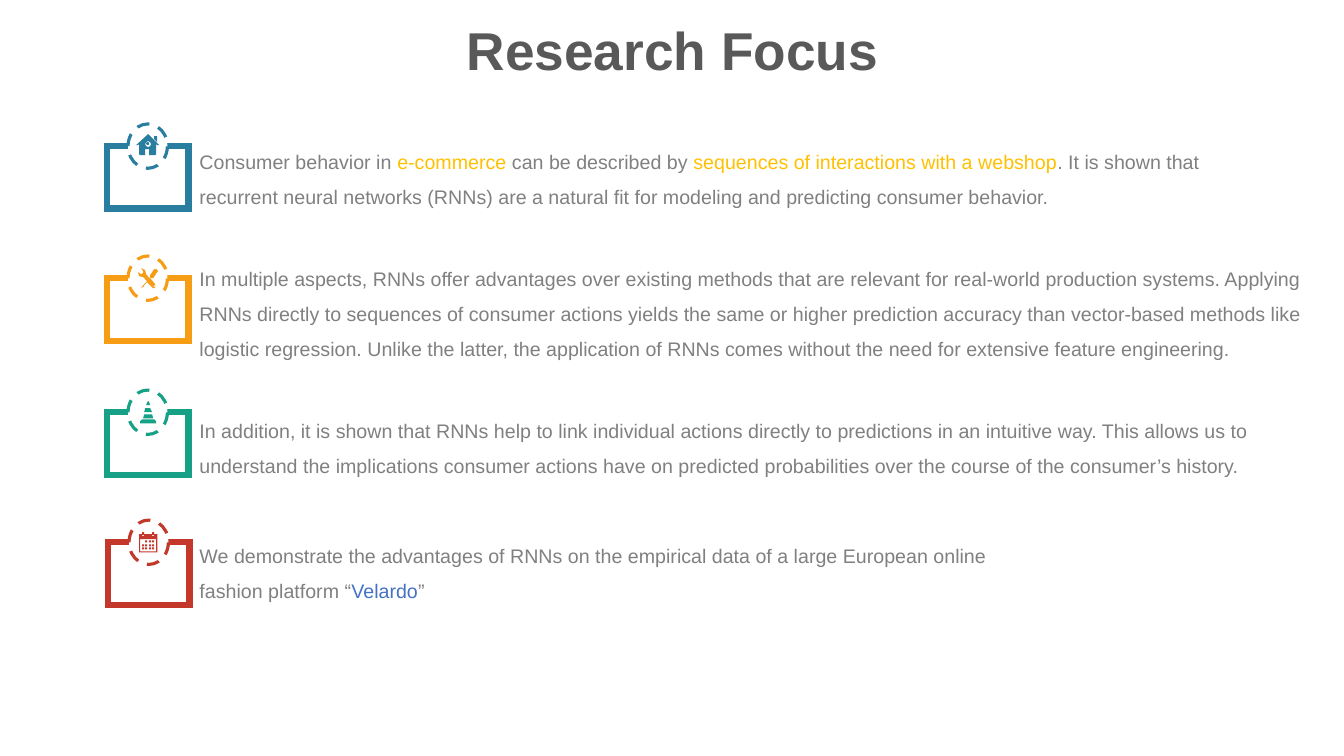
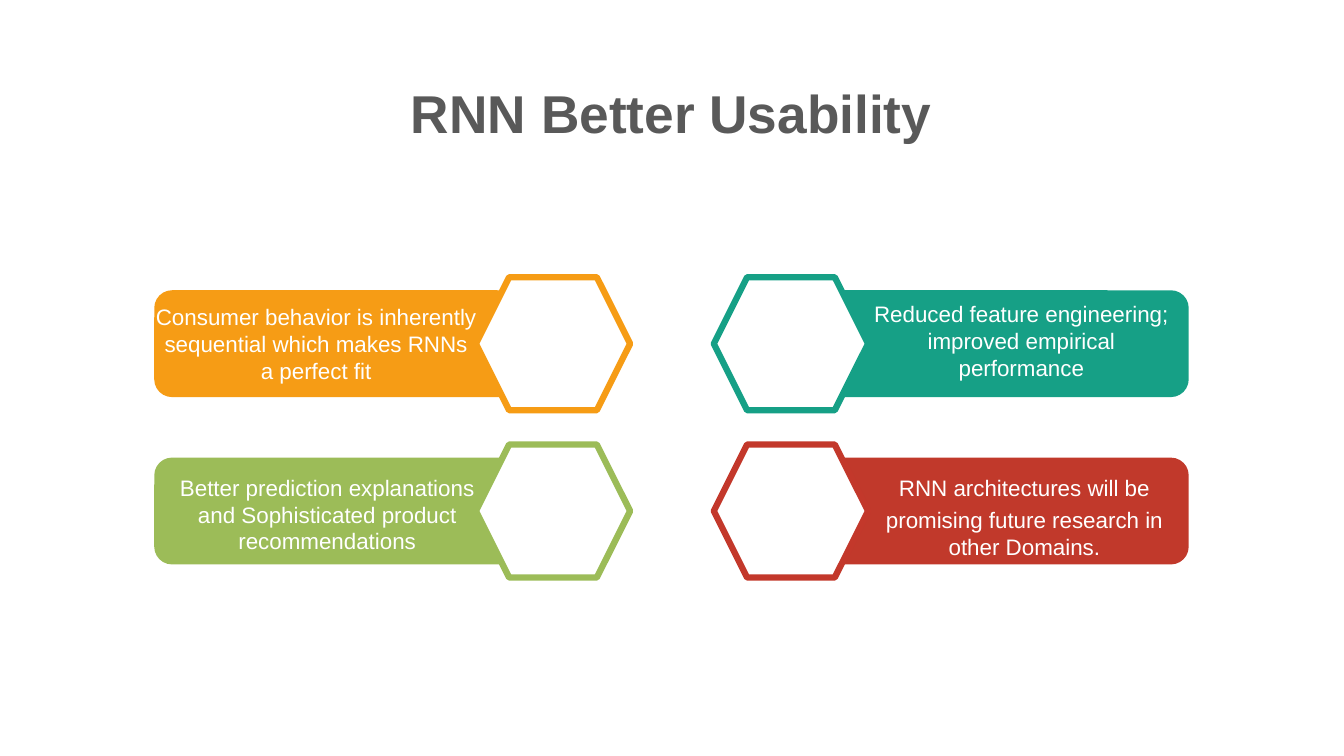
from dataclasses import dataclass

from lxml import etree
from pptx import Presentation
from pptx.dml.color import RGBColor as RGB
from pptx.enum.dml import MSO_LINE as Dash
from pptx.enum.shapes import MSO_SHAPE as Shape
from pptx.enum.text import MSO_ANCHOR as Anchor, PP_ALIGN as Align
from pptx.oxml.ns import qn
from pptx.util import Inches, Pt


@dataclass(frozen=True)
class Theme:
    font: str = "Arial"
    title: int = 38
    label: int = 16
    body: int = 14
    stroke: float = 4.5
    ring: float = 2.25
    dark: str = "595959"
    gray: str = "808080"
    white: str = "FFFFFF"
    gold: str = "FFC000"
    link: str = "4472C4"
    blue: str = "297E9F"
    orange: str = "F69C15"
    teal: str = "16A086"
    red: str = "C1392B"
    ruby: str = "C3382B"
    lime: str = "9CBC58"


THEME = Theme()

# Icon outlines in hundredths of an inch from the badge frame's corner;
# each outline is a list of contours, where an inner contour is a hole.
HOUSE = [
    [[(41, -12), (29, -1), (31, -1), (32, -2), (32, 8), (33, 9), (38, 9),
      (38, 3), (42, 3), (42, 9), (48, 9), (49, 8), (49, -2), (50, -1),
      (52, -1)],
     [(41, 1), (39, 0), (38, -2), (39, -4), (41, -5), (43, -4), (44, -2),
      (43, 0)]],
    [[(50, -4), (50, -10), (47, -10), (47, -7)]],
]
TOOLS = [
    [[(51, -7), (49, -9), (47, -9), (43, -3), (43, -1), (42, 0), (39, -4),
      (38, -8), (34, -10), (36, -7), (36, -5), (34, -4), (31, -6), (32, -2),
      (36, -1), (40, 3), (37, 6), (36, 7), (34, 10), (37, 8), (37, 7), (40, 4),
      (46, 10), (48, 10), (48, 6), (43, 0), (44, -1), (44, 0), (46, 0),
      (50, -6)],
     [(47, 7), (48, 8), (47, 9), (46, 8)]],
]
CONE = [
    [[(49, 11), (33, 11), (33, 9), (35, 7), (47, 7), (49, 9)],
     [(36, 6), (37, 2), (45, 2), (46, 6)],
     [(37, 0), (38, -4), (43, -4), (45, 0)],
     [(40, -10), (41, -11), (42, -10), (43, -7), (39, -7)]],
]
DATES = [
    [[(49, -8), (46, -8), (46, -6), (44, -6), (44, -8), (36, -8), (36, -6),
      (34, -6), (34, -8), (31, -8), (31, 10), (49, 10)],
     [(48, 9), (32, 9), (32, -3), (48, -3)]],
]

# Small preset parts of an icon: kind, left, top, width, height.
KNOB = [(Shape.OVAL, 39, -4, 3, 3)]
DAYS = [(Shape.RECTANGLE, x, y, 2, 2) for y in (-2, 2, 5)
        for x in (34, 37, 41, 44) if (x, y) != (34, -2)]
TABS = [(Shape.RECTANGLE, x, -10, 2, 3) for x in (34, 44)]


def write(frame, paras, size=THEME.body, color=THEME.gray, bold=False,
          align=Align.LEFT, lines=1.0, gap=0):
    """Fill a frame; a paragraph is a list of strings or (string, colour) pairs."""
    for i, runs in enumerate(paras):
        para = frame.paragraphs[0] if i == 0 else frame.add_paragraph()
        para.alignment = align
        para.line_spacing = lines
        if i:
            para.space_before = Pt(gap)
        for item in runs:
            text, tint = (item, color) if isinstance(item, str) else item
            run = para.add_run()
            run.text = text
            font = run.font
            font.name, font.size, font.bold = THEME.font, Pt(size), bold
            font.color.rgb = RGB.from_string(tint)


class Deck:
    def __init__(self):
        self.prs = Presentation()
        self.prs.slide_width = Inches(13.33)
        self.prs.slide_height = Inches(7.5)
        self.slide = None

    def page(self, title, x, y, h):
        self.slide = self.prs.slides.add_slide(self.prs.slide_layouts[6])
        self.text([[title]], x, y, 10, h, anchor=Anchor.MIDDLE,
                  size=THEME.title, color=THEME.dark, bold=True,
                  align=Align.CENTER, lines=0.9)

    def text(self, paras, x, y, w, h, anchor=Anchor.TOP, inset=True, **style):
        area = self.slide.shapes.add_textbox(*map(Inches, (x, y, w, h)))
        frame = area.text_frame
        frame.word_wrap = True
        frame.vertical_anchor = anchor
        if not inset:
            frame.margin_left = frame.margin_right = 0
            frame.margin_top = frame.margin_bottom = 0
        write(frame, paras, **style)

    def paint(self, shape, fill=None, line=None, width=THEME.stroke):
        shape.shadow.inherit = False
        if fill:
            shape.fill.solid()
            shape.fill.fore_color.rgb = RGB.from_string(fill)
        else:
            shape.fill.background()
        if line:
            shape.line.color.rgb = RGB.from_string(line)
            shape.line.width = Pt(width)
        else:
            shape.line.fill.background()
        return shape

    def shape(self, kind, x, y, w, h, **look):
        item = self.slide.shapes.add_shape(kind, *map(Inches, (x, y, w, h)))
        return self.paint(item, **look)

    def trace(self, parts, x, y, color):
        """Draw one outline made of several contours."""
        pen = self.slide.shapes.build_freeform(*parts[0][0], scale=Inches(0.01))
        for i, part in enumerate(parts):
            if i:
                pen.move_to(*part[0])
            pen.add_line_segments(part[1:], close=True)
        self.paint(pen.convert_to_shape(Inches(x), Inches(y)), fill=color)

    def badge(self, icon, bits, x, y, color, rim):
        frame = self.shape(Shape.RECTANGLE, x, y, 0.81, 0.62, line=color)
        miter = etree.SubElement(frame.line._get_or_add_ln(), qn("a:miter"))
        miter.set("lim", "800000")
        ring = self.shape(Shape.OVAL, x + 0.21, y - 0.22, 0.39, 0.44,
                          fill=THEME.white, line=rim, width=THEME.ring)
        ring.line.dash_style = Dash.DASH
        for parts in icon:
            self.trace(parts, x, y, color)
        for kind, left, top, w, h in bits:
            self.shape(kind, x + left / 100, y + top / 100, w / 100, h / 100,
                       fill=color)


def focus(deck):
    deck.page("Research Focus", 1.67, 0.03, 1)
    rows = [
        (HOUSE, KNOB, 1.06, 1.45, THEME.blue, THEME.blue, 1.32, 11.05, [
            ["Consumer behavior in ", ("e-commerce", THEME.gold),
             " can be described by ",
             ("sequences of interactions with a webshop", THEME.gold),
             ". It is shown that"],
            ["recurrent neural networks (RNNs) are a natural fit for modeling "
             "and predicting consumer behavior."]]),
        (TOOLS, [], 1.06, 2.76, THEME.orange, THEME.orange, 2.48, 11.24, [
            ["In multiple aspects, RNNs offer advantages over existing methods "
             "that are relevant for real-world production systems. Applying"],
            ["RNNs directly to sequences of consumer actions yields the same or "
             "higher prediction accuracy than vector-based methods like "
             "logistic regression. Unlike the latter, the application of RNNs "
             "comes without the need for extensive feature engineering."]]),
        (CONE, [], 1.06, 4.09, THEME.teal, THEME.teal, 3.99, 11.37, [
            ["In addition, it is shown that RNNs help to link individual "
             "actions directly to predictions in an intuitive way. This allows "
             "us to understand the implications consumer actions have on "
             "predicted probabilities over the course of the consumer’s "
             "history."]]),
        (DATES, DAYS + TABS, 1.07, 5.38, THEME.ruby, THEME.red, 5.23, 9.42, [
            ["We demonstrate the advantages of RNNs on the empirical data of a "
             "large European online"],
            ["fashion platform “", ("Velardo", THEME.link), "”"]]),
    ]
    for *mark, top, w, paras in rows:
        deck.badge(*mark)
        deck.text(paras, 1.88, top, w, 0.81, lines=1.5)


def usage(deck):
    deck.page("RNN Better Usability", 1.66, 0.74, 0.82)
    left, right = (1.53, 4.72), (7.58, 7.08)
    upper, lower = 2.88, 4.54
    cards = [
        (left, upper, THEME.orange, THEME.orange, (1.54, 3.01, 3.19),
         [["Consumer behavior is inherently sequential which makes RNNs "
           "a perfect fit"]]),
        (left, lower, THEME.lime, THEME.lime, (1.6, 4.7, 3.29),
         [["Better prediction explanations and Sophisticated product "
           "recommendations"]]),
        (right, upper, THEME.teal, THEME.teal, (8.6, 2.98, 3.06),
         [["Reduced feature engineering; improved empirical performance"]]),
        (right, lower, THEME.red, THEME.ruby, (8.7, 4.7, 2.92),
         [["RNN architectures will be"],
          ["promising future research in other Domains."]]),
    ]
    for (bar, hexa), y, color, edge, spot, paras in cards:
        deck.shape(Shape.ROUNDED_RECTANGLE, bar, y, 4.21, 1.06, fill=color)
        deck.shape(Shape.HEXAGON, hexa, y - 0.13, 1.53, 1.32,
                   fill=THEME.white, line=edge)
        deck.text(paras, *spot, 0.81, inset=False, size=THEME.label,
                  color=THEME.white, align=Align.CENTER, gap=3.8)


def main():
    deck = Deck()
    focus(deck)
    usage(deck)
    deck.prs.save("out.pptx")


if __name__ == "__main__":
    main()
